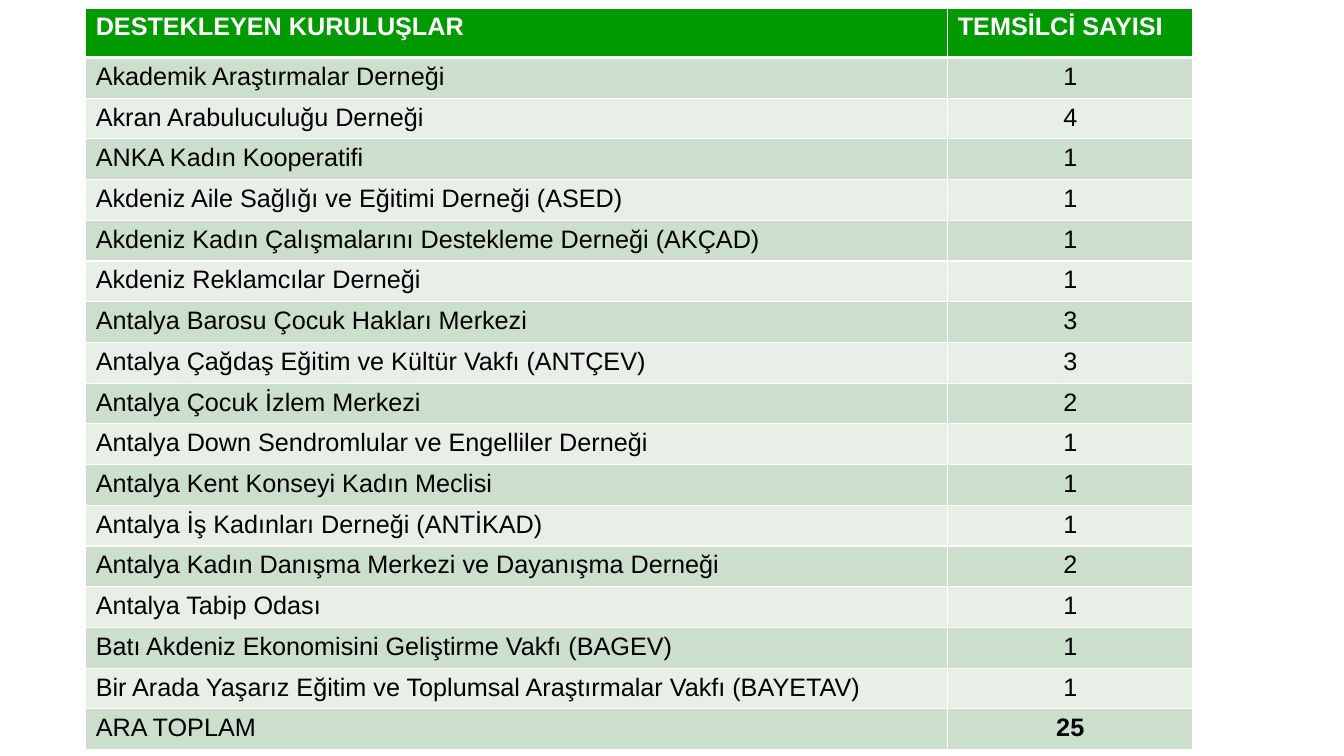
from lxml import etree
from pptx import Presentation
from pptx import util as u
from pptx.dml.color import RGBColor
from pptx.enum import text
from pptx.oxml.ns import qn

HEADER = ("DESTEKLEYEN KURULUŞLAR", "TEMSİLCİ SAYISI")
SUPPORTERS = [
    ("Akademik Araştırmalar Derneği", 1),
    ("Akran Arabuluculuğu Derneği", 4),
    ("ANKA Kadın Kooperatifi", 1),
    ("Akdeniz Aile Sağlığı ve Eğitimi Derneği (ASED)", 1),
    ("Akdeniz Kadın Çalışmalarını Destekleme Derneği (AKÇAD)", 1),
    ("Akdeniz Reklamcılar Derneği", 1),
    ("Antalya Barosu Çocuk Hakları Merkezi", 3),
    ("Antalya Çağdaş Eğitim ve Kültür Vakfı (ANTÇEV)", 3),
    ("Antalya Çocuk İzlem Merkezi", 2),
    ("Antalya Down Sendromlular ve Engelliler Derneği", 1),
    ("Antalya Kent Konseyi Kadın Meclisi", 1),
    ("Antalya İş Kadınları Derneği (ANTİKAD)", 1),
    ("Antalya Kadın Danışma Merkezi ve Dayanışma Derneği", 2),
    ("Antalya Tabip Odası", 1),
    ("Batı Akdeniz Ekonomisini Geliştirme Vakfı (BAGEV)", 1),
    ("Bir Arada Yaşarız Eğitim ve Toplumsal Araştırmalar Vakfı (BAYETAV)", 1),
]
COLUMN_WIDTHS = (8.55, 2.43)
TABLE_HEIGHT, HEADER_HEIGHT = 7.36, 0.49
WHITE, BLACK, GREEN = "FFFFFF", "000000", "009900"
BANDS = ("CCDECC", "E7EFE7")


def color(value):
    """Turn a hex string into a colour."""
    return RGBColor.from_string(value)


def write(cell, content, ink=BLACK, bold=False, centered=False):
    """Put one formatted paragraph into a cell."""
    para = cell.text_frame.paragraphs[0]
    para.alignment = text.PP_ALIGN.CENTER if centered else text.PP_ALIGN.LEFT
    span = para.add_run()
    span.text = content
    span.font.name = "Arial"
    span.font.size = u.Pt(18)
    span.font.bold = bold
    span.font.color.rgb = color(ink)


def paint(cell, fill, top=1, bottom=1):
    """Fill a cell and give it white borders with widths in points."""
    cell.fill.solid()
    cell.fill.fore_color.rgb = color(fill)
    properties = cell._tc.get_or_add_tcPr()
    widths = {"L": 1, "R": 1, "T": top, "B": bottom}
    for position, (side, width) in enumerate(widths.items()):
        border = etree.Element(qn(f"a:ln{side}"), w=str(u.Pt(width)))
        solid = etree.SubElement(border, qn("a:solidFill"))
        etree.SubElement(solid, qn("a:srgbClr"), val=WHITE)
        properties.insert(position, border)


def add_supporter_table(page):
    """Add the table of supporters with its header and total."""
    total = sum(count for _, count in SUPPORTERS)
    body = SUPPORTERS + [("ARA TOPLAM", total)]
    frame = page.shapes.add_table(
        len(body) + 1, len(HEADER), u.Inches(0.85), u.Inches(0.08),
        u.Inches(sum(COLUMN_WIDTHS)), u.Inches(TABLE_HEIGHT))
    table = frame.table
    for column, width in zip(table.columns, COLUMN_WIDTHS):
        column.width = u.Inches(width)
    for row in table.rows:
        row.height = u.Inches((TABLE_HEIGHT - HEADER_HEIGHT) / len(body))
    table.rows[0].height = u.Inches(HEADER_HEIGHT)

    for column, title in enumerate(HEADER):
        cell = table.cell(0, column)
        write(cell, title, ink=WHITE, bold=True)
        paint(cell, GREEN, bottom=3)
    for row, (name, count) in enumerate(body, start=1):
        name_cell, count_cell = table.cell(row, 0), table.cell(row, 1)
        write(name_cell, name)
        write(count_cell, str(count), bold=row == len(body), centered=True)
        for cell in (name_cell, count_cell):
            paint(cell, BANDS[(row - 1) % 2], top=3 if row == 1 else 1)


def main():
    """Build the slide and save it."""
    deck = Presentation()
    deck.slide_width, deck.slide_height = u.Inches(13.33), u.Inches(7.5)
    page = deck.slides.add_slide(deck.slide_layouts[6])
    add_supporter_table(page)
    deck.save("out.pptx")


if __name__ == "__main__":
    main()
